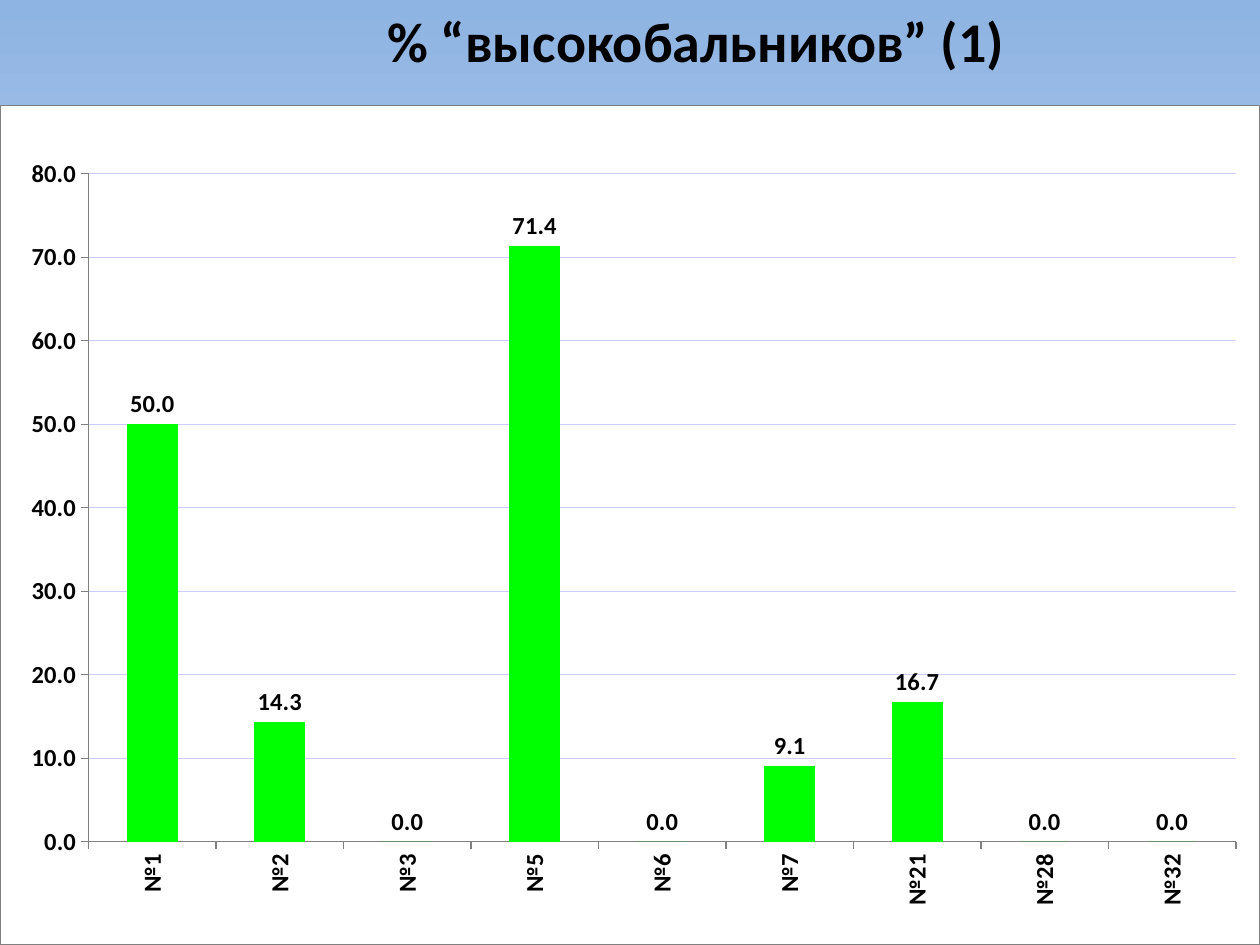
from typing import NamedTuple

from lxml import etree
from pptx import Presentation
from pptx.chart.data import CategoryChartData
from pptx.dml.color import RGBColor
from pptx.enum.chart import XL_CHART_TYPE, XL_LABEL_POSITION, XL_TICK_MARK
from pptx.enum.text import MSO_ANCHOR, MSO_AUTO_SIZE, PP_ALIGN
from pptx.oxml import parse_xml
from pptx.oxml.ns import nsdecls, qn
from pptx.util import Inches, Pt

COLUMNS = XL_CHART_TYPE.COLUMN_CLUSTERED
ABOVE_BAR = XL_LABEL_POSITION.OUTSIDE_END
TICK_OUTSIDE = XL_TICK_MARK.OUTSIDE
TOP = MSO_ANCHOR.TOP
FIT_SHAPE = MSO_AUTO_SIZE.SHAPE_TO_FIT_TEXT
CENTER = PP_ALIGN.CENTER

BLACK = RGBColor(0x00, 0x00, 0x00)
WHITE = RGBColor(0xFF, 0xFF, 0xFF)
GRAY = RGBColor(0x80, 0x80, 0x80)
GREEN = RGBColor(0x00, 0xFF, 0x00)
LAVENDER = RGBColor(0xCC, 0xCC, 0xFF)
SKY = RGBColor(0x8E, 0xB4, 0xE3)
PALE_BLUE = RGBColor(0xC2, 0xD1, 0xED)
MIST = RGBColor(0xE1, 0xE8, 0xF5)

WIDTH, HEIGHT = Inches(10), Inches(7.5)
TITLE = "% “высокобальников” (1)"
NUMBER_FORMAT = "0.0"
BACKGROUND_STOPS = {0: SKY, 50: PALE_BLUE, 100: MIST}
PLOT_SHARES = {"x": 0.025, "y": 0.063, "w": 0.956, "h": 0.89}


class School(NamedTuple):
    label: str
    percent: float


SCHOOLS = [
    School("№1", 50), School("№2", 14.3), School("№3", 0),
    School("№5", 71.4), School("№6", 0), School("№7", 9.1),
    School("№21", 16.7), School("№28", 0), School("№32", 0),
]


def set_values(target, values: dict) -> None:
    for name, value in values.items():
        setattr(target, name, value)


def format_font(font, size: int, bold: bool = True) -> None:
    set_values(font, {"name": "Calibri", "size": Pt(size), "bold": bold})
    font.color.rgb = BLACK


def format_line(line, color: RGBColor) -> None:
    line.color.rgb = color
    line.width = Pt(0)


def paint_background(slide) -> None:
    fill = slide.background.fill
    fill.gradient()
    gradient = slide.background._cSld.find(f".//{qn('a:gradFill')}")
    stops = gradient.find(qn("a:gsLst"))
    for stop in list(stops):
        stops.remove(stop)
    for percent, color in BACKGROUND_STOPS.items():
        stop = etree.SubElement(stops, qn("a:gs"), pos=str(percent * 1000))
        etree.SubElement(stop, qn("a:srgbClr"), val=str(color))
    direction = gradient.find(qn("a:lin"))
    direction.set("ang", str(90 * 60000))
    direction.set("scaled", "0")


def add_title(slide) -> None:
    title = slide.shapes.title
    set_values(title, {"left": Inches(2.95), "top": 0,
                       "width": Inches(5.15), "height": Inches(0.64)})
    frame = title.text_frame
    frame.text = TITLE
    set_values(frame, {"word_wrap": False, "auto_size": FIT_SHAPE,
                       "vertical_anchor": TOP})
    para = frame.paragraphs[0]
    para.alignment = CENTER
    format_font(para.runs[0].font, 32)


def frame_chart(chart) -> None:
    """Give the chart its white area, gray border and plot position."""
    area = parse_xml(
        f"<c:spPr {nsdecls('c', 'a')}>"
        f'<a:solidFill><a:srgbClr val="{WHITE}"/></a:solidFill>'
        f'<a:ln w="0"><a:solidFill><a:srgbClr val="{GRAY}"/></a:solidFill></a:ln>'
        "</c:spPr>")
    chart_part = chart._chartSpace.find(qn("c:chart"))
    chart_part.addnext(area)

    plot_area = chart_part.find(qn("c:plotArea"))
    for layout in plot_area.findall(qn("c:layout")):
        plot_area.remove(layout)
    layout = etree.Element(qn("c:layout"))
    manual = etree.SubElement(layout, qn("c:manualLayout"))
    settings = {"layoutTarget": "outer", "xMode": "edge", "yMode": "edge"}
    for tag, value in {**settings, **PLOT_SHARES}.items():
        etree.SubElement(manual, qn(f"c:{tag}"), val=str(value))
    plot_area.insert(0, layout)


def format_axes(chart) -> None:
    for axis in (chart.category_axis, chart.value_axis):
        axis.major_tick_mark = TICK_OUTSIDE
        format_font(axis.tick_labels.font, 14)
        format_line(axis.format.line, GRAY)

    chart.category_axis.has_major_gridlines = False
    label_body = chart.category_axis._element.find(f"{qn('c:txPr')}/{qn('a:bodyPr')}")
    label_body.set("rot", str(-90 * 60000))
    label_body.set("vert", "horz")

    values = chart.value_axis
    set_values(values, {"minimum_scale": 0, "maximum_scale": 80, "major_unit": 10,
                        "has_major_gridlines": True})
    format_line(values.major_gridlines.format.line, LAVENDER)
    set_values(values.tick_labels, {"number_format": NUMBER_FORMAT,
                                    "number_format_is_linked": False})


def add_percent_chart(slide) -> None:
    data = CategoryChartData(number_format=NUMBER_FORMAT)
    data.categories = [school.label for school in SCHOOLS]
    data.add_series("Series 1", [school.percent for school in SCHOOLS])
    top = Inches(0.84)
    chart = slide.shapes.add_chart(COLUMNS, 0, top, WIDTH, HEIGHT - top, data).chart
    set_values(chart, {"has_title": False, "has_legend": False})
    format_font(chart.font, 10, bold=False)
    frame_chart(chart)
    format_axes(chart)

    plot = chart.plots[0]
    set_values(plot, {"vary_by_categories": False, "gap_width": 150})
    series = plot.series[0]
    series.format.fill.solid()
    series.format.fill.fore_color.rgb = GREEN
    labels = series.data_labels
    set_values(labels, {"show_value": True, "position": ABOVE_BAR,
                        "number_format": NUMBER_FORMAT,
                        "number_format_is_linked": False})
    format_font(labels.font, 14)


def main() -> None:
    deck = Presentation()
    set_values(deck, {"slide_width": WIDTH, "slide_height": HEIGHT})
    slide = deck.slides.add_slide(deck.slide_layouts.get_by_name("Title Only"))
    paint_background(slide)
    add_title(slide)
    add_percent_chart(slide)
    deck.save("out.pptx")


if __name__ == "__main__":
    main()
